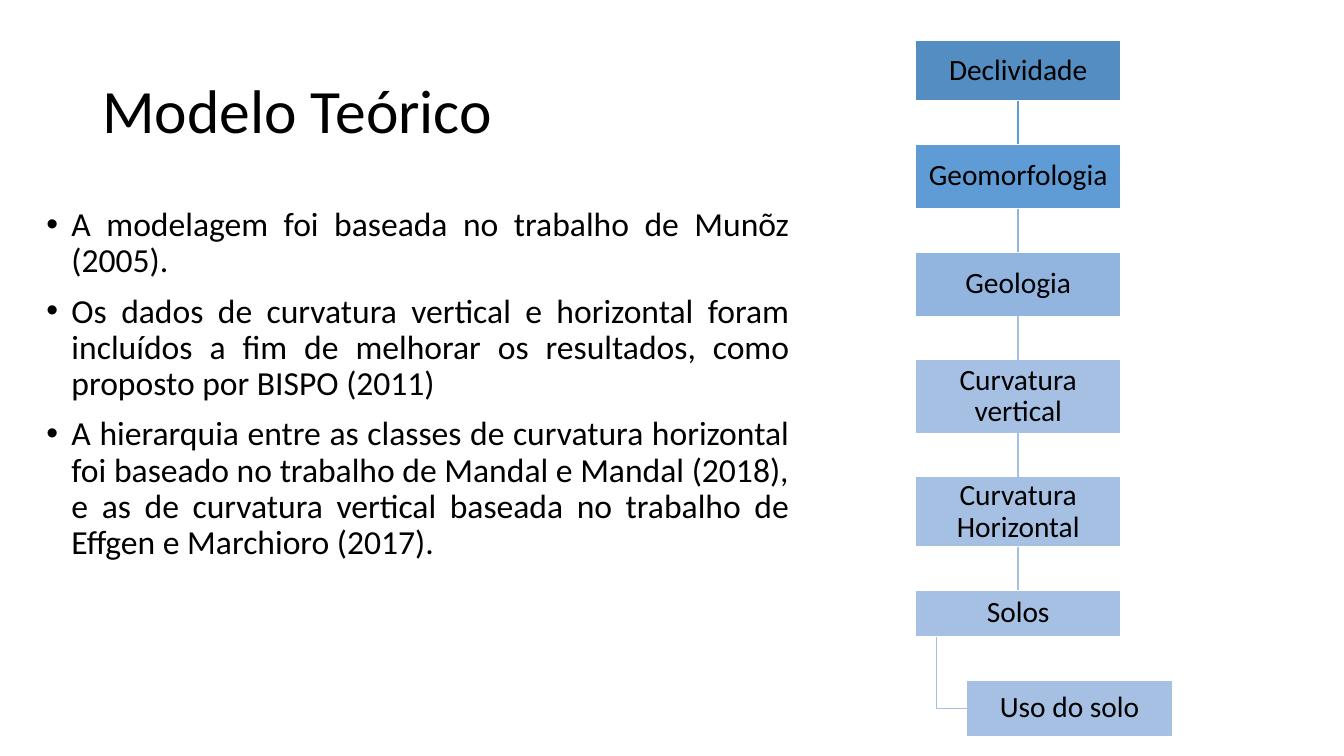
"""Build the theoretical model slide with its chain of factors."""
from dataclasses import dataclass

from lxml.etree import SubElement
from pptx import Presentation
from pptx.dml.color import RGBColor
from pptx.enum.shapes import MSO_CONNECTOR, MSO_SHAPE
from pptx.enum.text import MSO_ANCHOR, PP_ALIGN
from pptx.oxml.ns import qn
from pptx.shapes.autoshape import Shape
from pptx.shapes.shapetree import SlideShapes
from pptx.text.text import TextFrame, _Paragraph
from pptx.util import Pt

BLACK = RGBColor(0x00, 0x00, 0x00)
WHITE = RGBColor(0xFF, 0xFF, 0xFF)
DEEP = RGBColor(0x53, 0x8D, 0xC1)
BRIGHT = RGBColor(0x5F, 0x9C, 0xD5)
SOFT = RGBColor(0x91, 0xB5, 0xDE)
PALE = RGBColor(0xA5, 0xC0, 0xE3)

LEFT = 653.8
TOP = 28.8
WIDTH = 147
GAP = 31
INDENT = 36.7
STEM = 15


@dataclass
class Factor:
    """One box in the chain."""
    label: str
    height: float
    fill: RGBColor
    indent: float = 0


FACTORS = [
    Factor("Declividade", 43.2, DEEP),
    Factor("Geomorfologia", 46, BRIGHT),
    Factor("Geologia", 46, SOFT),
    Factor("Curvatura vertical", 52.5, PALE),
    Factor("Curvatura Horizontal", 50, PALE),
    Factor("Solos", 33.3, PALE),
    Factor("Uso do solo", 40.3, PALE, INDENT),
]
POINTS = [
    "A modelagem foi baseada no trabalho de Munõz (2005).",
    "Os dados de curvatura vertical e horizontal foram incluídos a fim de "
    "melhorar os resultados, como proposto por BISPO (2011)",
    "A hierarquia entre as classes de curvatura horizontal foi baseado no "
    "trabalho de Mandal e Mandal (2018), e as de curvatura vertical baseada "
    "no trabalho de Effgen e Marchioro (2017).",
]


def write(para: _Paragraph, text: str, size: float, align: PP_ALIGN) -> None:
    """Fill one paragraph and format its runs."""
    para.text = text
    para.alignment = align
    para.line_spacing = 0.9
    for run in para.runs:
        run.font.size = Pt(size)
        run.font.name = "Calibri"
        run.font.color.rgb = BLACK


def add_text(shapes: SlideShapes, left: float, top: float, width: float,
             height: float) -> TextFrame:
    """Add a wrapping text box and return its frame."""
    box = shapes.add_textbox(Pt(left), Pt(top), Pt(width), Pt(height))
    box.text_frame.word_wrap = True
    return box.text_frame


def add_points(frame: TextFrame) -> None:
    """Write the bulleted points."""
    for num, text in enumerate(POINTS):
        para = frame.paragraphs[0] if num == 0 else frame.add_paragraph()
        write(para, text, 24, PP_ALIGN.JUSTIFY)
        para.space_before = Pt(10)
        props = para._p.get_or_add_pPr()
        props.set("marL", str(Pt(18)))
        props.set("indent", str(Pt(-18)))
        SubElement(props, qn("a:buFont"), typeface="Arial")
        SubElement(props, qn("a:buChar"), char="•")


def add_box(shapes: SlideShapes, item: Factor, top: float) -> Shape:
    """Draw one factor as a labelled rectangle."""
    box = shapes.add_shape(MSO_SHAPE.RECTANGLE, Pt(LEFT + item.indent),
                           Pt(top), Pt(WIDTH), Pt(item.height))
    box.shadow.inherit = False
    box.fill.solid()
    box.fill.fore_color.rgb = item.fill
    box.line.color.rgb = WHITE
    box.line.width = Pt(1)
    frame = box.text_frame
    frame.word_wrap = True
    frame.vertical_anchor = MSO_ANCHOR.MIDDLE
    frame.margin_left = frame.margin_right = Pt(1)
    frame.margin_top = frame.margin_bottom = Pt(1)
    write(frame.paragraphs[0], item.label, 21, PP_ALIGN.CENTER)
    return box


def join(shapes: SlideShapes, upper: Shape, lower: Shape,
         color: RGBColor) -> None:
    """Link the facing sides of two stacked boxes."""
    link = shapes.add_connector(MSO_CONNECTOR.STRAIGHT, 0, 0, 0, 0)
    link.begin_connect(upper, 2)
    link.end_connect(lower, 0)
    link.line.color.rgb = color
    link.line.width = Pt(1)
    SubElement(link._element.spPr, qn("a:effectLst"))


def branch(shapes: SlideShapes, upper: Shape, lower: Shape,
           color: RGBColor) -> None:
    """Draw the elbow from a box to the indented one below it."""
    stem = upper.left + Pt(STEM)
    level = lower.top + lower.height // 2
    pen = shapes.build_freeform(stem, upper.top + upper.height)
    pen.add_line_segments([(stem, level), (lower.left, level)], close=False)
    elbow = pen.convert_to_shape()
    elbow.shadow.inherit = False
    elbow.fill.background()
    elbow.line.color.rgb = color
    elbow.line.width = Pt(1)


def add_chain(shapes: SlideShapes) -> None:
    """Stack the factors at equal gaps and link each to the next."""
    top = TOP
    boxes = []
    for item in FACTORS:
        boxes.append(add_box(shapes, item, top))
        top += item.height + GAP
    for upper, lower, item in zip(boxes, boxes[1:], FACTORS[1:]):
        draw = branch if item.indent else join
        draw(shapes, upper, lower, item.fill)


def main() -> None:
    """Build and save the slide."""
    deck = Presentation()
    deck.slide_width = Pt(960)
    deck.slide_height = Pt(540)
    shapes = deck.slides.add_slide(deck.slide_layouts[6]).shapes
    title = add_text(shapes, 66, 28.8, 828, 104.4)
    title.vertical_anchor = MSO_ANCHOR.MIDDLE
    write(title.paragraphs[0], "Modelo Teórico", 44, PP_ALIGN.LEFT)
    add_points(add_text(shapes, 26, 144.7, 545, 268.6))
    add_chain(shapes)
    deck.save("out.pptx")


if __name__ == "__main__":
    main()
